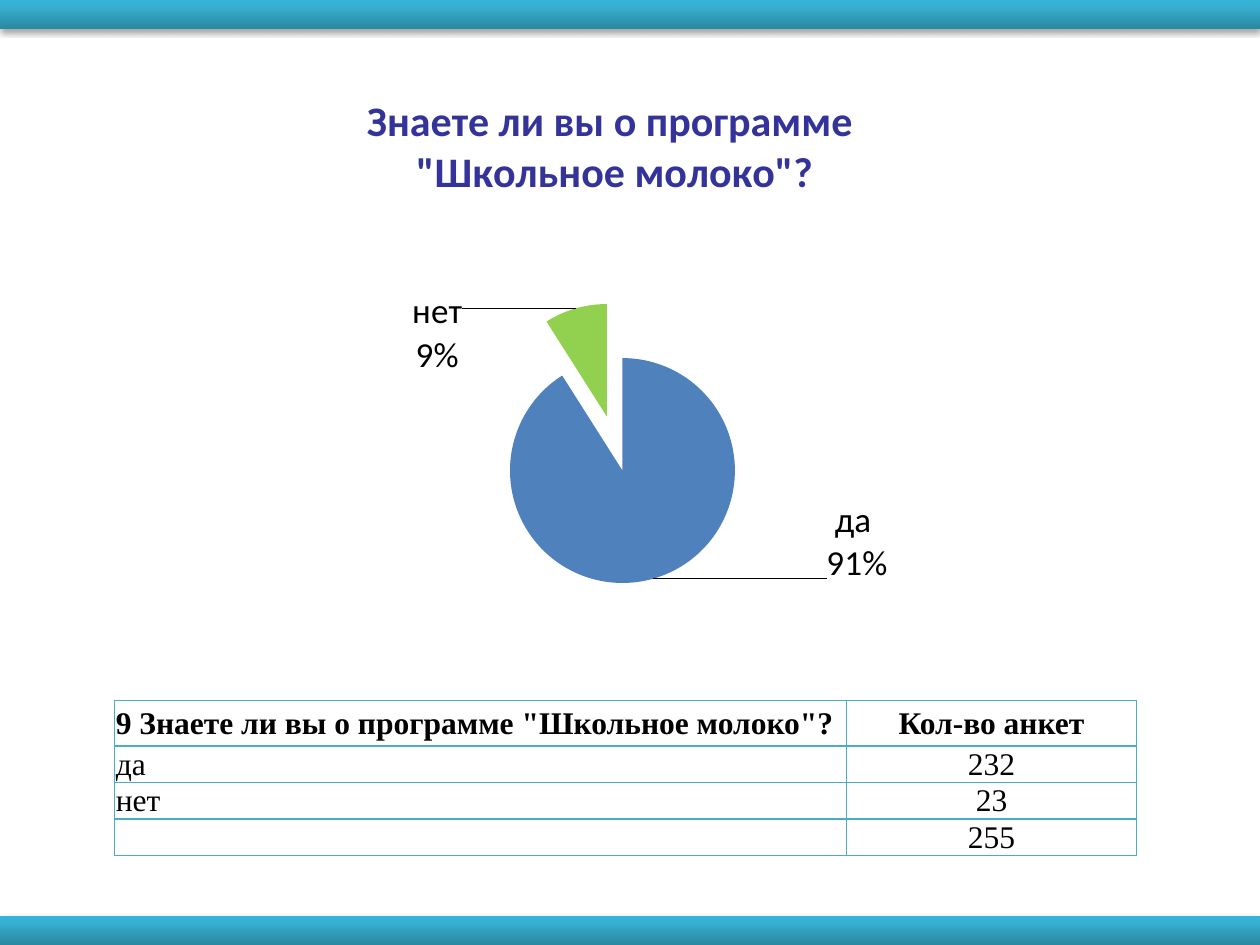
from copy import deepcopy
from dataclasses import dataclass

from pptx import Presentation
from pptx.chart.data import CategoryChartData
from pptx.dml.color import RGBColor as RGB
from pptx.enum.chart import XL_CHART_TYPE as CT, XL_LABEL_POSITION as LP
from pptx.enum.shapes import MSO_SHAPE as SHAPE
from pptx.enum.text import MSO_ANCHOR as ANCHOR, PP_ALIGN as AL
from pptx.oxml import parse_xml
from pptx.oxml.ns import nsdecls, qn
from pptx.util import Inches, Pt

COLS, ROWS = 100, 75


@dataclass(frozen=True)
class Theme:
    chart_font: str = "Calibri"
    table_font: str = "Times New Roman"
    text: str = "000000"
    title: str = "333399"
    border: str = "4BACC6"
    slices: tuple = ("4F81BD", "92D050")
    band: tuple = ((0, "2A88A2"), (80, "37B1D2"), (100, "34B4D6"))
    title_size: int = 24
    label_size: int = 20
    table_size: int = 18


def set_font(font, color, **values):
    for name, value in values.items():
        setattr(font, name, value)
    font.color.rgb = RGB.from_string(color)


def layout_xml(**values):
    """Manual chart layout; values are shares of the chart's size."""
    items = "".join(f'<c:{k} val="{v}"/>' for k, v in values.items())
    return parse_xml(f'<c:layout {nsdecls("c")}><c:manualLayout>{items}'
                     '</c:manualLayout></c:layout>')


class SlideBuilder:
    def __init__(self, prs, theme):
        self.prs, self.theme = prs, theme
        self.slide = prs.slides.add_slide(prs.slide_layouts[6])

    def box(self, col, row, cols, rows):
        dx, dy = self.prs.slide_width / COLS, self.prs.slide_height / ROWS
        return [int(v) for v in (col * dx, row * dy, cols * dx, rows * dy)]

    def band(self, *grid):
        """Full-width gradient bar with a soft shadow below."""
        sp = self.slide.shapes.add_shape(SHAPE.RECTANGLE, *self.box(*grid))
        sp.line.fill.background()
        stops = "".join(f'<a:gs pos="{pos * 1000}"><a:srgbClr val="{color}"/></a:gs>'
                        for pos, color in self.theme.band)
        gradient = parse_xml(f'<a:gradFill {nsdecls("a")} rotWithShape="1"><a:gsLst>{stops}'
                             '</a:gsLst><a:lin ang="16200000" scaled="0"/></a:gradFill>')
        shadow = parse_xml(
            f'<a:effectLst {nsdecls("a")}><a:outerShdw blurRad="{Pt(3.1)}" dist="{Pt(1.8)}" '
            'dir="5400000" rotWithShape="0"><a:srgbClr val="000000"><a:alpha val="35000"/>'
            '</a:srgbClr></a:outerShdw></a:effectLst>')
        sp_pr = sp._element.spPr
        sp_pr.find(qn("a:prstGeom")).addnext(gradient)
        sp_pr.append(shadow)

    def pie(self, grid, title, cats, vals, plot_area, title_at, label_shifts):
        th = self.theme
        data = CategoryChartData()
        data.categories = cats
        data.add_series("Series 1", vals)
        chart = self.slide.shapes.add_chart(CT.PIE, *self.box(*grid), data).chart
        set_font(chart.font, th.text, name=th.chart_font, size=Pt(10))
        chart.has_legend = False

        tf = chart.chart_title.text_frame
        tf.text = title
        for p in tf.paragraphs:
            p.alignment = AL.CENTER
            for r in p.runs:
                set_font(r.font, th.title, name=th.chart_font, size=Pt(th.title_size), bold=True)
        title_el = chart.chart_title._element
        self.replace_layout(title_el, title_el.find(qn("c:tx")), title_at)
        area = chart._chartSpace.chart.plotArea
        self.replace_layout(area, None, plot_area)

        chart.plots[0].vary_by_categories = True
        series = chart.plots[0].series[0]
        for i, color in enumerate(th.slices):
            fill = series.points[i].format.fill
            fill.solid()
            fill.fore_color.rgb = RGB.from_string(color)
        explosion = parse_xml(f'<c:explosion {nsdecls("c")} val="25"/>')
        series._element.find(qn("c:dPt")).addprevious(explosion)
        for point in series._element.findall(qn("c:dPt")):
            point.find(qn("c:spPr")).addprevious(deepcopy(explosion))
        self.pie_labels(series.data_labels, label_shifts)

    @staticmethod
    def replace_layout(parent, before, values):
        old = parent.find(qn("c:layout"))
        if old is not None:
            parent.remove(old)
        new = layout_xml(**values)
        if before is None:
            parent.insert(0, new)
        else:
            before.addnext(new)

    def pie_labels(self, labels, shifts):
        th = self.theme
        set_font(labels.font, th.text, name=th.chart_font, size=Pt(th.label_size))
        for name, value in dict(show_percentage=True, show_category_name=True,
                                show_value=False, position=LP.OUTSIDE_END).items():
            setattr(labels, name, value)
        root = labels._element
        root.find(qn("c:showBubbleSize")).addnext(
            parse_xml(f'<c:separator {nsdecls("c")}>\n</c:separator>'))
        shared = [el for el in root if el.tag != qn("c:showLeaderLines")]
        for i, (x, y) in enumerate(shifts):
            label = parse_xml(f'<c:dLbl {nsdecls("c")}><c:idx val="{i}"/></c:dLbl>')
            label.append(layout_xml(x=x, y=y))
            label.extend(deepcopy(shared))
            root.insert(i, label)

    def table(self, grid, col_widths, row_heights, rows):
        table = self.slide.shapes.add_table(len(rows), len(col_widths), *self.box(*grid)).table
        table.first_row = table.horz_banding = False
        for column, width in zip(table.columns, col_widths):
            column.width = self.box(0, 0, width, 0)[2]
        for row, height in zip(table.rows, row_heights):
            row.height = self.box(0, 0, 0, height)[3]
        for i, texts in enumerate(rows):
            for j, text in enumerate(texts):
                self.cell(table.cell(i, j), text, bold=i == 0,
                          align=AL.CENTER if j else AL.LEFT)

    def cell(self, cell, text, bold, align):
        th, edge = self.theme, Inches(0.01)
        for name, value in dict(margin_left=edge, margin_right=edge, margin_top=edge,
                                margin_bottom=0, vertical_anchor=ANCHOR.MIDDLE).items():
            setattr(cell, name, value)
        p = cell.text_frame.paragraphs[0]
        p.alignment = align
        if text:
            r = p.add_run()
            r.text = text
            set_font(r.font, th.text, name=th.table_font, size=Pt(th.table_size), bold=bold)
        else:
            p._p.get_or_add_endParaRPr().set("sz", "1200")
        tc_pr = cell._tc.get_or_add_tcPr()
        for side in ("lnL", "lnR", "lnT", "lnB"):
            tc_pr.append(parse_xml(
                f'<a:{side} {nsdecls("a")} w="{Pt(1)}"><a:solidFill><a:srgbClr '
                f'val="{th.border}"/></a:solidFill></a:{side}>'))
        cell.fill.background()


def main():
    prs = Presentation()
    prs.slide_width, prs.slide_height = Inches(10), Inches(7.5)
    page = SlideBuilder(prs, Theme())

    band_height = 2.3
    for top in (ROWS - band_height, 0):
        page.band(0, top, COLS, band_height)

    page.table((9.1, 55.6, 81.1, 12.3), (58.1, 23), (3.6, 2.9, 2.9, 2.9), [
        ('9 Знаете ли вы о программе "Школьное молоко"?', "Кол-во анкет"),
        ("да", "232"),
        ("нет", "23"),
        ("", "255"),
    ])
    page.pie(
        (14.6, 5.2, 67.7, 49.6),
        'Знаете ли вы о программе\n "Школьное молоко"?',
        ("да ", "нет"), (91, 9),
        plot_area=dict(layoutTarget="inner", xMode="edge", yMode="edge",
                       x=0.34, y=0.38, w=0.33, h=0.45),
        title_at=dict(xMode="edge", yMode="edge", x=0.21, y=0.04),
        label_shifts=((0.2, -0.14), (-0.13, 0.12)))
    prs.save("out.pptx")


if __name__ == "__main__":
    main()
